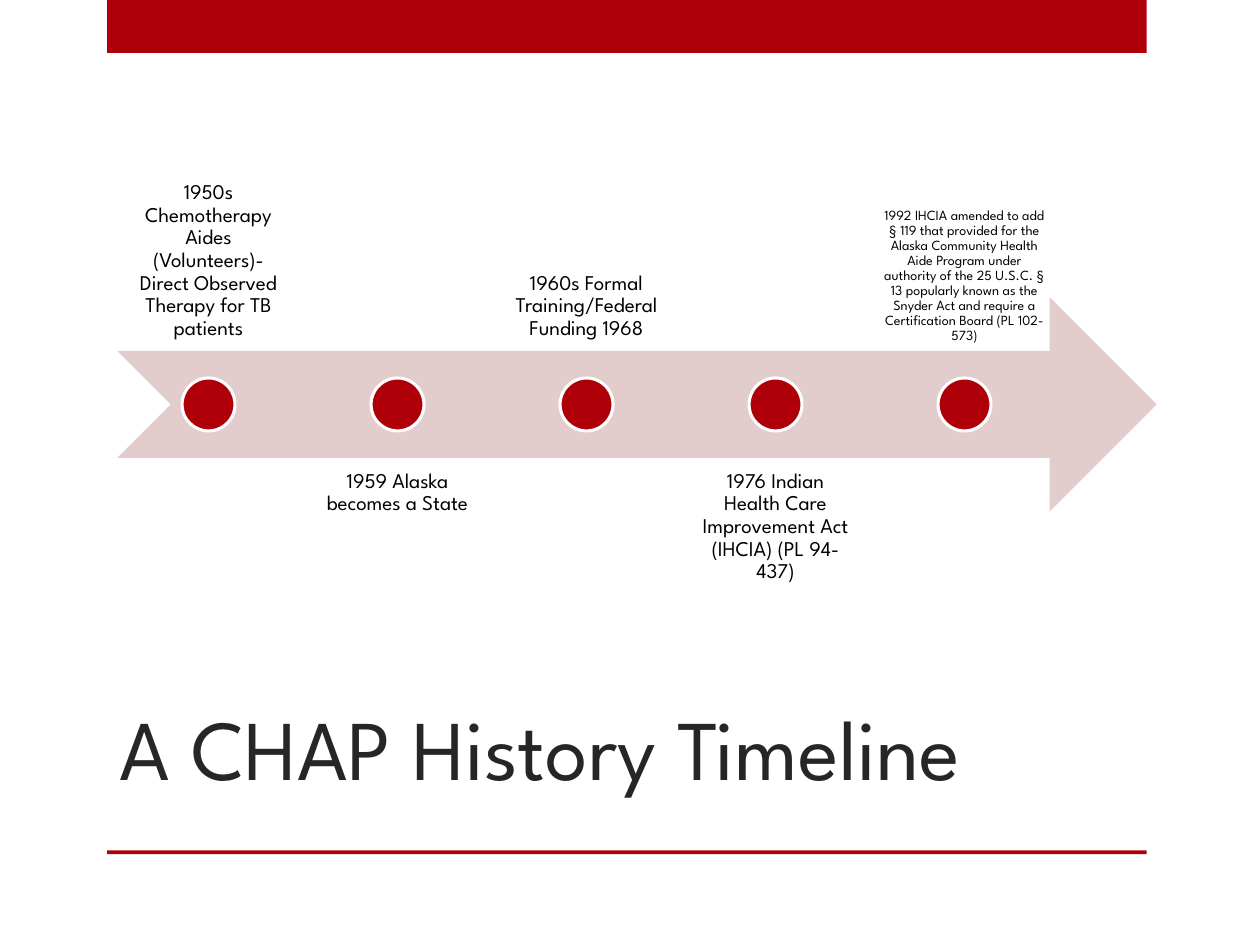
"""Build the CHAP history timeline slide."""
from pptx import Presentation
from pptx import util as u
from pptx.dml.color import RGBColor
from pptx.enum import shapes, text

FONT = "League Spartan"
RED, PINK, WHITE, BLACK, CHARCOAL = "AF0009", "E3CCCC", "FFFFFF", "000000", "262626"
TITLE = "A CHAP History Timeline"
EVENTS = [
    ("1950s Chemotherapy Aides (Volunteers)-Direct Observed Therapy for TB patients", 12, 0.09),
    ("1959 Alaska becomes a State", 12, 0.09),
    ("1960s Formal Training/Federal Funding 1968", 12, 0.09),
    ("1976 Indian Health Care Improvement Act (IHCIA) (PL 94-437)", 12, 0.09),
    ("1992 IHCIA amended to add § 119 that provided for the Alaska Community Health Aide "
     "Program under authority of the 25 U.S.C. § 13 popularly known as the Snyder Act and "
     "require a Certification Board (PL 102-573)", 8, 0.06),
]
BARS = [(0.85, 0, 8.25, 0.42), (0.85, 6.75, 8.25, 0.03)]
ARROW = (0.93, 2.36, 8.25, 1.7)
LABEL_LEFT, LABEL_WIDTH, LABEL_HEIGHT = 0.94, 1.43, 1.7
LABEL_TOPS = (1.09, 3.64)
STEP, DOT, DOT_TOP = 1.5, 0.42, 3


def color(value):
    return RGBColor.from_string(value)


def add_figure(page, kind, place, fill, outline=None):
    figure = page.shapes.add_shape(kind, *map(u.Inches, place))
    figure.shadow.inherit = False
    figure.fill.solid()
    figure.fill.fore_color.rgb = color(fill)
    if outline:
        figure.line.color.rgb = color(outline)
        figure.line.width = u.Pt(1.75)
    else:
        figure.line.fill.background()


def add_text(page, place, words, size, ink, anchor, insets):
    frame = page.shapes.add_textbox(*map(u.Inches, place)).text_frame
    frame.word_wrap = True
    frame.vertical_anchor = anchor
    frame.margin_left = frame.margin_right = u.Inches(insets[0])
    frame.margin_top = frame.margin_bottom = u.Inches(insets[1])
    para = frame.paragraphs[0]
    para.text = words
    para.line_spacing = 0.9
    para.font.name = FONT
    para.font.size = u.Pt(size)
    para.font.color.rgb = color(ink)
    return para


def main():
    deck = Presentation()
    deck.slide_width, deck.slide_height = u.Inches(10), u.Inches(7.5)
    page = deck.slides.add_slide(deck.slide_layouts[6])
    kinds, anchors = shapes.MSO_SHAPE, text.MSO_ANCHOR

    for bar in BARS:
        add_figure(page, kinds.RECTANGLE, bar, RED)
    add_text(page, (0.85, 5.34, 8.42, 1.05), TITLE, 48.6, CHARCOAL,
             anchors.BOTTOM, (0.1, 0.05))
    add_figure(page, kinds.NOTCHED_RIGHT_ARROW, ARROW, PINK)

    for index, (words, size, inset) in enumerate(EVENTS):
        left = LABEL_LEFT + index * STEP
        below = index % 2
        label = add_text(page, (left, LABEL_TOPS[below], LABEL_WIDTH, LABEL_HEIGHT),
                         words, size, BLACK,
                         anchors.TOP if below else anchors.BOTTOM, (inset, inset))
        label.alignment = text.PP_ALIGN.CENTER
        label.space_after = u.Pt(size * 0.35)
        dot_left = left + (LABEL_WIDTH - DOT) / 2
        add_figure(page, kinds.OVAL, (dot_left, DOT_TOP, DOT, DOT), RED, WHITE)

    deck.save("out.pptx")


if __name__ == "__main__":
    main()
